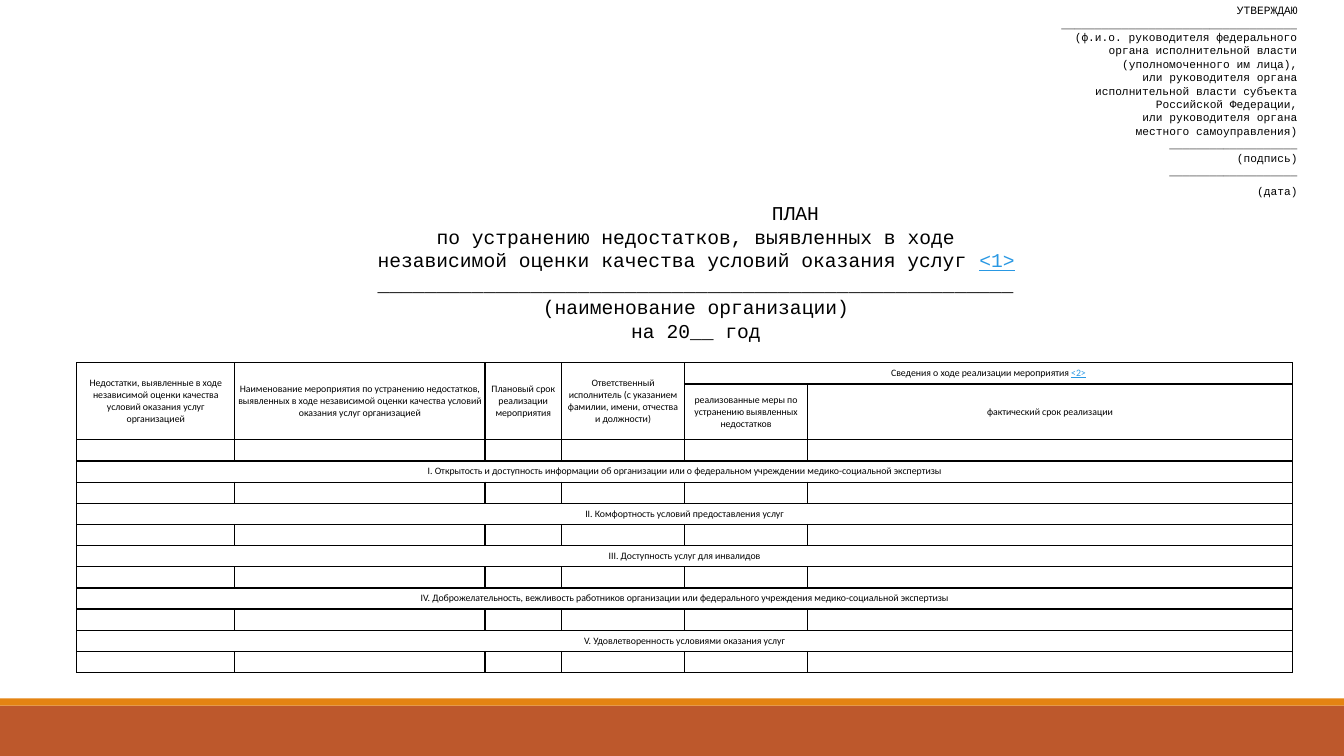
from dataclasses import dataclass

from lxml import etree
from pptx import Presentation
from pptx.dml.color import RGBColor
from pptx.enum.shapes import MSO_SHAPE
from pptx.enum.text import MSO_ANCHOR, PP_ALIGN
from pptx.oxml.ns import qn
from pptx.util import Inches, Pt

RECT = MSO_SHAPE.RECTANGLE
MIDDLE = MSO_ANCHOR.MIDDLE
CENTER, RIGHT = PP_ALIGN.CENTER, PP_ALIGN.RIGHT

BLACK = RGBColor(0x00, 0x00, 0x00)
WHITE = RGBColor(0xFF, 0xFF, 0xFF)
RUST = RGBColor(0xBD, 0x58, 0x2C)
ORANGE = RGBColor(0xE4, 0x83, 0x12)
LINK_BLUE = RGBColor(0x29, 0x98, 0xE3)


@dataclass(frozen=True)
class Line:
    text: str
    size: int
    align: PP_ALIGN
    indent: float = 0.38
    note: str = ""
    before: int = 0
    after: int = 0


@dataclass(frozen=True)
class Heading:
    row: int
    col: int
    text: str
    row_span: int = 1
    col_span: int = 1
    note: str = ""


APPROVAL = [
    "УТВЕРЖДАЮ",
    "_" * 35,
    "(ф.и.о. руководителя федерального",
    "органа исполнительной власти",
    "(уполномоченного им лица),",
    "или руководителя органа",
    "исполнительной власти субъекта",
    "Российской Федерации,",
    "или руководителя органа",
    "местного самоуправления)",
    "_" * 19,
    "(подпись)",
    "_" * 19,
]
LINES = [Line(text, 8, RIGHT) for text in APPROVAL] + [
    Line("(дата)", 8, RIGHT, before=5, after=2),
    Line("ПЛАН", 14, CENTER, indent=2.35),
    Line("по устранению недостатков, выявленных в ходе", 14, CENTER),
    Line("независимой оценки качества условий оказания услуг ", 14, CENTER, note="<1>"),
    Line("_" * 54, 14, CENTER),
    Line("(наименование организации)", 14, CENTER),
    Line("на 20__ год", 14, CENTER),
]

COL_WIDTHS = [1.57, 2.48, 0.76, 1.22, 1.22, 4.81]
SECTIONS = [
    "I. Открытость и доступность информации об организации или о федеральном "
    "учреждении медико-социальной экспертизы",
    "II. Комфортность условий предоставления услуг",
    "III. Доступность услуг для инвалидов",
    "IV. Доброжелательность, вежливость работников организации или федерального "
    "учреждения медико-социальной экспертизы",
    "V. Удовлетворенность условиями оказания услуг",
]
ROW_HEIGHTS = [0.21, 0.55] + [0.21] * (2 * len(SECTIONS) + 1)
HEADINGS = [
    Heading(0, 0, "Недостатки, выявленные в ходе независимой оценки качества "
            "условий оказания услуг организацией", row_span=2),
    Heading(0, 1, "Наименование мероприятия по устранению недостатков, выявленных в ходе "
            "независимой оценки качества условий оказания услуг организацией", row_span=2),
    Heading(0, 2, "Плановый срок реализации мероприятия", row_span=2),
    Heading(0, 3, "Ответственный исполнитель (с указанием фамилии, имени, отчества "
            "и должности)", row_span=2),
    Heading(0, 4, "Сведения о ходе реализации мероприятия ", col_span=2, note="<2>"),
    Heading(1, 4, "реализованные меры по устранению выявленных недостатков"),
    Heading(1, 5, "фактический срок реализации"),
] + [
    Heading(3 + 2 * i, 0, text, col_span=len(COL_WIDTHS))
    for i, text in enumerate(SECTIONS)
]


def add_rect(s, left: float, top: float, width: float, height: float, color: RGBColor):
    sp = s.shapes.add_shape(RECT, Inches(left), Inches(top), Inches(width), Inches(height))
    sp.shadow.inherit = False
    sp.fill.solid()
    sp.fill.fore_color.rgb = color
    sp.line.fill.background()
    return sp


def write(p, text: str, note: str, font: str, size: int, align: PP_ALIGN) -> None:
    p.alignment = align
    p.font.name = font
    p.font.size = Pt(size)
    for part, color in ((text, BLACK), (note, LINK_BLUE)):
        if part:
            r = p.add_run()
            r.text = part
            r.font.color.rgb = color
            if part == note:
                r.font.underline = True


def style_cell(cell) -> None:
    tc_pr = cell._tc.get_or_add_tcPr()
    for side in ("lnL", "lnR", "lnT", "lnB"):
        ln = etree.SubElement(tc_pr, qn(f"a:{side}"), w=str(Pt(1)))
        fill = etree.SubElement(ln, qn("a:solidFill"))
        etree.SubElement(fill, qn("a:srgbClr"), val=str(BLACK))
    cell.fill.solid()
    cell.fill.fore_color.rgb = WHITE
    cell.vertical_anchor = MIDDLE
    cell.margin_left = cell.margin_right = Inches(0.03)
    cell.margin_top = cell.margin_bottom = Inches(0.04)
    # Keeps empty rows as low as the text rows
    etree.SubElement(cell.text_frame.paragraphs[0]._p, qn("a:endParaRPr"), sz="700")


def add_approval_and_title(s) -> None:
    sp = add_rect(s, 0.46, -0.04, 12.51, 3.64, WHITE)
    tf = sp.text_frame
    tf.word_wrap = True
    tf.vertical_anchor = MIDDLE
    tf.margin_bottom = Inches(0.18)
    for i, line in enumerate(LINES):
        p = tf.add_paragraph() if i else tf.paragraphs[0]
        write(p, line.text, line.note, "Courier New", line.size, line.align)
        p.space_before = Pt(line.before)
        p.space_after = Pt(line.after)
        p._p.get_or_add_pPr().set("indent", str(Inches(line.indent)))


def add_plan_table(s) -> None:
    frame = s.shapes.add_table(
        len(ROW_HEIGHTS), len(COL_WIDTHS), Inches(0.76), Inches(3.6),
        Inches(sum(COL_WIDTHS)), Inches(sum(ROW_HEIGHTS)))
    table = frame.table
    table.first_row = table.horz_banding = False
    for column, width in zip(table.columns, COL_WIDTHS):
        column.width = Inches(width)
    for row, height in zip(table.rows, ROW_HEIGHTS):
        row.height = Inches(height)
    for cell in table.iter_cells():
        style_cell(cell)
    for h in HEADINGS:
        cell = table.cell(h.row, h.col)
        if h.row_span * h.col_span > 1:
            cell.merge(table.cell(h.row + h.row_span - 1, h.col + h.col_span - 1))
        write(cell.text_frame.paragraphs[0], h.text, h.note, "Calibri", 7, CENTER)


def main() -> None:
    prs = Presentation()
    prs.slide_width = Inches(13.33)
    prs.slide_height = Inches(7.5)
    s = prs.slides.add_slide(prs.slide_layouts[6])
    # Footer bands
    add_rect(s, 0, 7, 13.33, 0.5, RUST)
    add_rect(s, 0, 6.93, 13.33, 0.07, ORANGE)
    # Approval block, title and plan
    add_approval_and_title(s)
    add_plan_table(s)
    prs.save("out.pptx")


if __name__ == "__main__":
    main()
